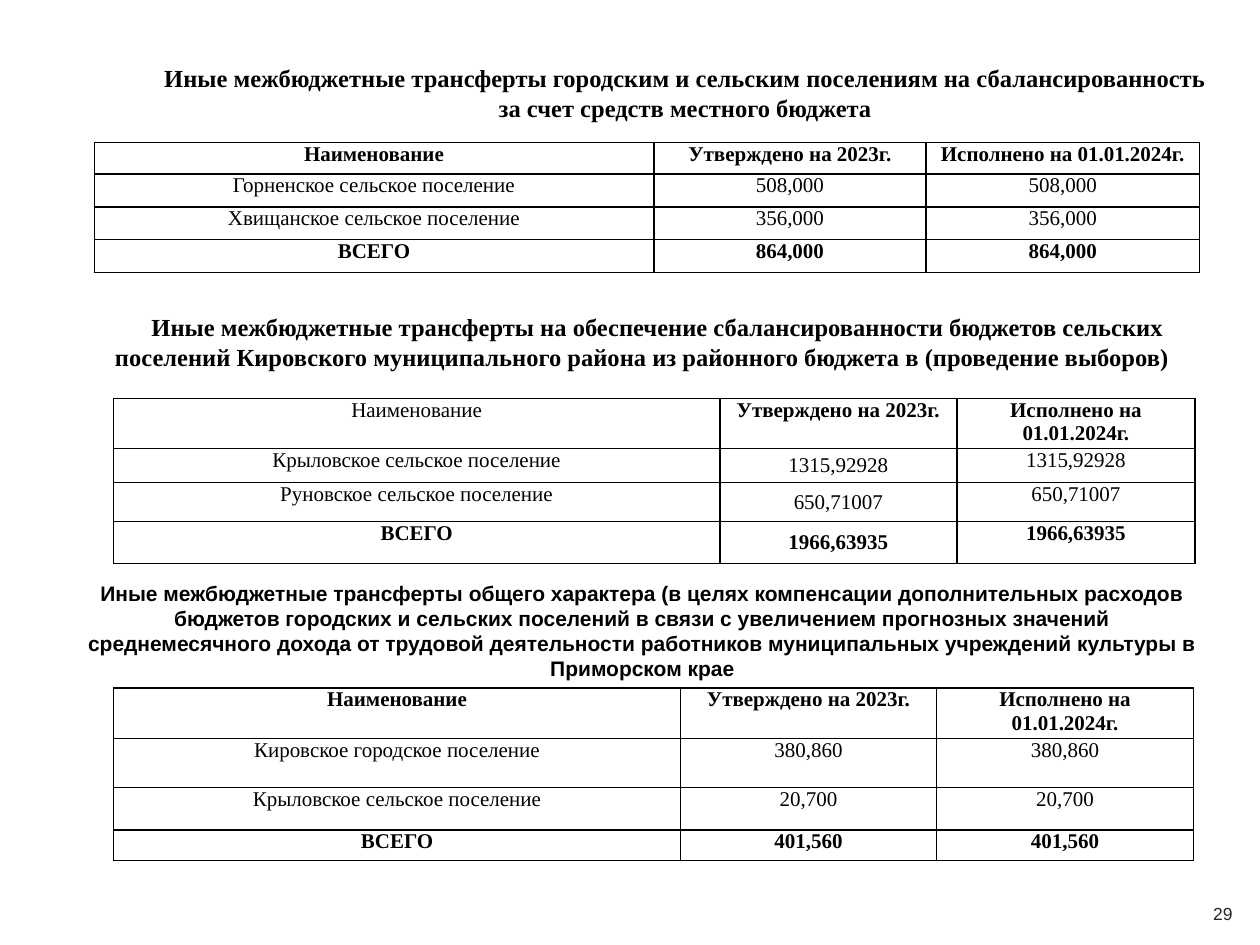
from dataclasses import dataclass

from lxml.etree import SubElement
from pptx import Presentation
from pptx.dml.color import RGBColor
from pptx.enum.text import MSO_ANCHOR, MSO_AUTO_SIZE, PP_ALIGN
from pptx.oxml import parse_xml
from pptx.oxml.ns import nsdecls, qn
from pptx.util import Cm, Pt

BLACK = RGBColor(0x00, 0x00, 0x00)
GRAY = RGBColor(0x26, 0x26, 0x26)
SERIF = "Times New Roman"
SANS = "Arial"
TOTAL = "ВСЕГО"
HEADS = ("Наименование", "Утверждено на 2023г.", "Исполнено на 01.01.2024г.")


@dataclass(frozen=True)
class Style:
    size: float
    font: str = SERIF
    bold: bool = True
    color: RGBColor = BLACK


@dataclass(frozen=True)
class Label:
    text: str
    box: tuple[float, float, float, float]
    style: Style
    anchor: MSO_ANCHOR = MSO_ANCHOR.MIDDLE
    indent: float = 0


@dataclass(frozen=True)
class Grid:
    left: float
    top: float
    cols: tuple[float, ...]
    rows: tuple[float, ...]
    sums: tuple[tuple[str, str], ...]
    plain: bool = False
    middle: bool = False


TITLE = Label(
    "Иные межбюджетные трансферты городским и сельским поселениям "
    "на сбалансированность за счет средств местного бюджета",
    (2.87, 0.94, 21.89, 1.85), Style(14))

LABELS = (
    Label("29", (24, 17.9, 1.3, 1.02), Style(10, SANS, False, GRAY)),
    Label(
        "Иные межбюджетные трансферты на обеспечение сбалансированности "
        "бюджетов сельских поселений Кировского муниципального района "
        "из районного бюджета в (проведение выборов)",
        (1.14, 6.17, 23.62, 1.45), Style(14), MSO_ANCHOR.TOP, 0.62),
    Label(
        "Иные межбюджетные трансферты общего характера (в целях компенсации "
        "дополнительных расходов бюджетов городских и сельских поселений "
        "в связи с увеличением прогнозных значений среднемесячного дохода "
        "от трудовой деятельности работников муниципальных учреждений "
        "культуры в Приморском крае",
        (1.47, 11.56, 22.96, 2.31), Style(12, SANS)),
)

GRIDS = (
    Grid(1.9, 2.87, (11.28, 5.49, 5.51), (0.64, 0.66, 0.66, 0.66), (
        ("Горненское сельское поселение", "508,000"),
        ("Хвищанское сельское поселение", "356,000"),
        (TOTAL, "864,000"))),
    Grid(2.29, 8.03, (12.22, 4.78, 4.8), (1.01, 0.69, 0.78, 0.85), (
        ("Крыловское сельское поселение", "1315,92928"),
        ("Руновское сельское поселение", "650,71007"),
        (TOTAL, "1966,63935")), plain=True, middle=True),
    Grid(2.29, 13.87, (11.43, 5.16, 5.18), (1.02, 0.99, 0.85, 0.62), (
        ("Кировское городское поселение", "380,860"),
        ("Крыловское сельское поселение", "20,700"),
        (TOTAL, "401,560"))),
)


def write(frame, text: str, style: Style, indent: float = 0) -> None:
    para = frame.paragraphs[0]
    para.alignment = PP_ALIGN.CENTER
    if indent:
        para._p.get_or_add_pPr().set("indent", str(Cm(indent)))
    run = para.add_run()
    run.text = text
    run.font.size = Pt(style.size)
    run.font.name = style.font
    run.font.bold = style.bold
    run.font.color.rgb = style.color


def fill_box(shape, label: Label) -> None:
    shape.left, shape.top, shape.width, shape.height = map(Cm, label.box)
    frame = shape.text_frame
    frame.word_wrap = True
    frame.auto_size = MSO_AUTO_SIZE.NONE
    frame.vertical_anchor = label.anchor
    write(frame, label.text, label.style, label.indent)


def add_label(slide, label: Label) -> None:
    fill_box(slide.shapes.add_textbox(*map(Cm, label.box)), label)


def border(cell) -> None:
    props = cell._tc.get_or_add_tcPr()
    for spot, side in enumerate(("lnL", "lnR", "lnT", "lnB")):
        line = parse_xml(f'<a:{side} {nsdecls("a")} w="{Pt(1)}"/>')
        fill = SubElement(line, qn("a:solidFill"))
        SubElement(fill, qn("a:srgbClr")).set("val", str(BLACK))
        props.insert(spot, line)


def add_grid(slide, grid: Grid) -> None:
    lines = (HEADS, *((name, value, value) for name, value in grid.sums))
    table = slide.shapes.add_table(
        len(lines), len(HEADS), Cm(grid.left), Cm(grid.top),
        Cm(sum(grid.cols)), Cm(sum(grid.rows))).table
    table.first_row = table.horz_banding = False
    for col, width in zip(table.columns, grid.cols):
        col.width = Cm(width)
    for row, height in zip(table.rows, grid.rows):
        row.height = Cm(height)
    for y, line in enumerate(lines):
        for x, text in enumerate(line):
            cell = table.cell(y, x)
            cell.margin_left = cell.margin_right = Cm(0.18)
            cell.margin_top = cell.margin_bottom = 0
            inner = grid.middle and y > 0 and x == 1
            cell.vertical_anchor = MSO_ANCHOR.MIDDLE if inner else MSO_ANCHOR.TOP
            cell.fill.background()
            border(cell)
            bold = y in (0, len(lines) - 1) and not (grid.plain and x == y == 0)
            write(cell.text_frame, text, Style(12, bold=bold))


def main() -> None:
    deck = Presentation()
    deck.slide_width, deck.slide_height = Cm(25.4), Cm(19.05)
    slide = deck.slides.add_slide(deck.slide_layouts[5])
    fill_box(slide.shapes.title, TITLE)
    for label in LABELS:
        add_label(slide, label)
    for grid in GRIDS:
        add_grid(slide, grid)
    deck.save("out.pptx")


if __name__ == "__main__":
    main()
